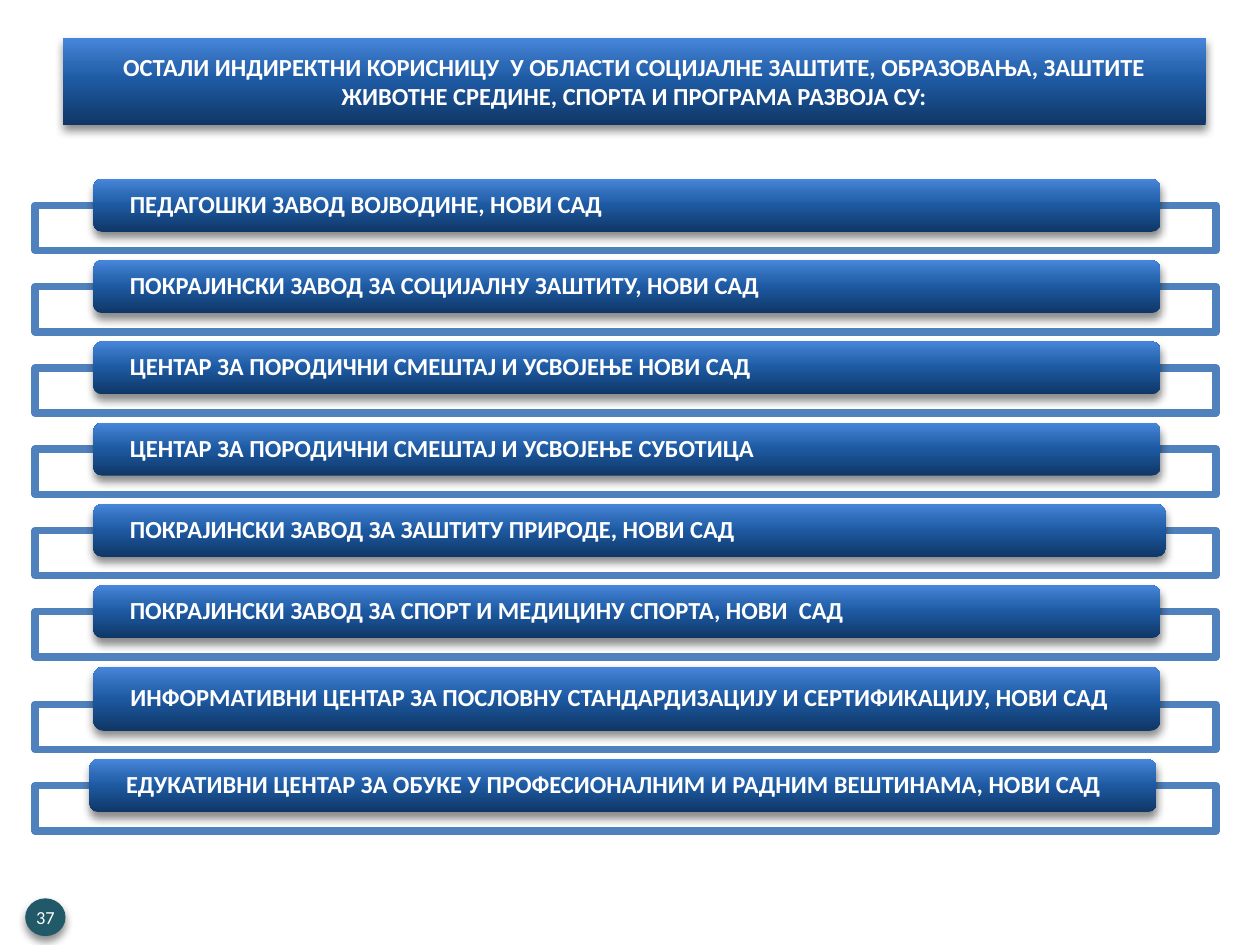
from dataclasses import dataclass
from lxml.etree import SubElement as Sub
from pptx import Presentation as Deck
from pptx.dml.color import RGBColor as Rgb
from pptx.enum.shapes import MSO_SHAPE as Kind
from pptx.enum.text import MSO_ANCHOR as Anchor, PP_ALIGN as Align
from pptx.oxml.ns import qn
from pptx.util import Inches, Pt


@dataclass(frozen=True)
class Theme:
    font: str = "Calibri"
    text: str = "FFFFFF"
    frame: str = "4F81BD"
    badge: str = "215968"
    shade: str = "000000"
    stops: tuple = ((0, "0F3766"), (50, "1D59A1"), (70, "2D6AB6"), (100, "4786DB"))
    body: float = 14
    small: float = 10.5
    edge: float = 4.33


@dataclass(frozen=True)
class Box:
    x: float
    y: float
    w: float
    h: float


@dataclass(frozen=True)
class Row:
    text: str
    x: float = 7.4
    w: float = 84.7
    h: float = 4.2


THEME = Theme()
WIDE, HIGH = Inches(10), Inches(7.5)
COLS, ROWS = 100, 75
TOP, GAP, DROP = 14.2, 2.25, 2.1
TITLE = (
    "ОСТАЛИ ИНДИРЕКТНИ КОРИСНИЦУ  У ОБЛАСТИ СОЦИЈАЛНЕ ЗАШТИТЕ, ОБРАЗОВАЊА, "
    "ЗАШТИТЕ ЖИВОТНЕ СРЕДИНЕ, СПОРТА И ПРОГРАМА РАЗВОЈА СУ:"
)
LIST = (
    Row("ПЕДАГОШКИ ЗАВОД ВОЈВОДИНЕ, НОВИ САД"),
    Row("ПОКРАЈИНСКИ ЗАВОД ЗА СОЦИЈАЛНУ ЗАШТИТУ, НОВИ САД"),
    Row("ЦЕНТАР ЗА ПОРОДИЧНИ СМЕШТАЈ И УСВОЈЕЊЕ НОВИ САД"),
    Row("ЦЕНТАР ЗА ПОРОДИЧНИ СМЕШТАЈ И УСВОЈЕЊЕ СУБОТИЦА"),
    Row("ПОКРАЈИНСКИ ЗАВОД ЗА ЗАШТИТУ ПРИРОДЕ, НОВИ САД", w=85.1),
    Row("ПОКРАЈИНСКИ ЗАВОД ЗА СПОРТ И МЕДИЦИНУ СПОРТА, НОВИ  САД"),
    Row("ИНФОРМАТИВНИ ЦЕНТАР ЗА ПОСЛОВНУ СТАНДАРДИЗАЦИЈУ И СЕРТИФИКАЦИЈУ, НОВИ САД", h=5.1),
    Row("ЕДУКАТИВНИ ЦЕНТАР ЗА ОБУКЕ У ПРОФЕСИОНАЛНИМ И РАДНИМ ВЕШТИНАМА, НОВИ САД", x=7.1),
)


def apply(item, look: dict) -> None:
    for name, value in look.items():
        setattr(item, name, value)


def shape(slide, kind, box: Box, fill: str):
    col, row = WIDE / COLS, HIGH / ROWS
    spot = (box.x * col, box.y * row, box.w * col, box.h * row)
    item = slide.shapes.add_shape(kind, *(round(v) for v in spot))
    item.shadow.inherit = False
    item.fill.solid()
    item.fill.fore_color.rgb = Rgb.from_string(fill)
    item.line.fill.background()
    return item


def tint(node, color: str, alpha: int | None = None) -> None:
    rgb = Sub(node, qn("a:srgbClr"), val=color)
    if alpha is not None:
        Sub(rgb, qn("a:alpha"), val=str(alpha * 1000))


def shadow(item) -> None:
    host = item._element.spPr.find(qn("a:effectLst"))
    cast = Sub(host, qn("a:outerShdw"), blurRad=str(Pt(5)), dist=str(Pt(3)),
               dir="5400000", rotWithShape="0")
    tint(cast, THEME.shade, 45)


def blend(item) -> None:
    item.fill.gradient()
    grad = item._element.spPr.find(qn("a:gradFill"))
    for node in list(grad):
        grad.remove(node)
    stops = Sub(grad, qn("a:gsLst"))
    for pos, color in THEME.stops:
        tint(Sub(stops, qn("a:gs"), pos=str(pos * 1000)), color)
    Sub(grad, qn("a:lin"), ang="16200000", scaled="0")


def write(item, text: str, size: float, bold: bool, pad: float, edge: float,
          para: dict, wrap: bool = True) -> None:
    frame = item.text_frame
    apply(frame, dict(
        word_wrap=wrap, vertical_anchor=Anchor.MIDDLE,
        margin_left=Inches(pad), margin_right=Inches(pad),
        margin_top=Inches(edge), margin_bottom=Inches(edge),
    ))
    line = frame.paragraphs[0]
    apply(line, para)
    run = line.add_run()
    run.text = text
    apply(run.font, dict(name=THEME.font, size=Pt(size), bold=bold))
    run.font.color.rgb = Rgb.from_string(THEME.text)


def badge(slide, text: str) -> None:
    item = shape(slide, Kind.OVAL, Box(2, 71.3, 3.2, 3), THEME.badge)
    shadow(item)
    write(item, text, THEME.small, False, 0.01, 0.05, dict(alignment=Align.CENTER), False)


def title(slide, text: str) -> None:
    item = shape(slide, Kind.RECTANGLE, Box(5, 3, 90.7, 6.9), THEME.frame)
    blend(item)
    shadow(item)
    write(item, text, THEME.body, True, 0.1, 0.05, dict(alignment=Align.CENTER))


def entry(slide, row: Row, top: float) -> None:
    back = shape(slide, Kind.RECTANGLE, Box(2.8, top + row.h - DROP, 93.7, 3.6), THEME.text)
    rgb = back._element.spPr.find(qn("a:solidFill"))[0]
    Sub(rgb, qn("a:alpha"), val="90000")
    back.line.color.rgb = Rgb.from_string(THEME.frame)
    back.line.width = Pt(THEME.edge)
    bar = shape(slide, Kind.ROUNDED_RECTANGLE, Box(row.x, top, row.w, row.h), THEME.frame)
    blend(bar)
    shadow(bar)
    write(bar, row.text, THEME.body, True, 0.27, 0,
          dict(alignment=Align.LEFT, line_spacing=0.9))


def main() -> None:
    deck = Deck()
    apply(deck, dict(slide_width=WIDE, slide_height=HIGH))
    slide = deck.slides.add_slide(deck.slide_layouts[6])
    badge(slide, "37")
    title(slide, TITLE)
    top = TOP
    for row in LIST:
        entry(slide, row, top)
        top += row.h + GAP
    deck.save("out.pptx")


if __name__ == "__main__":
    main()
